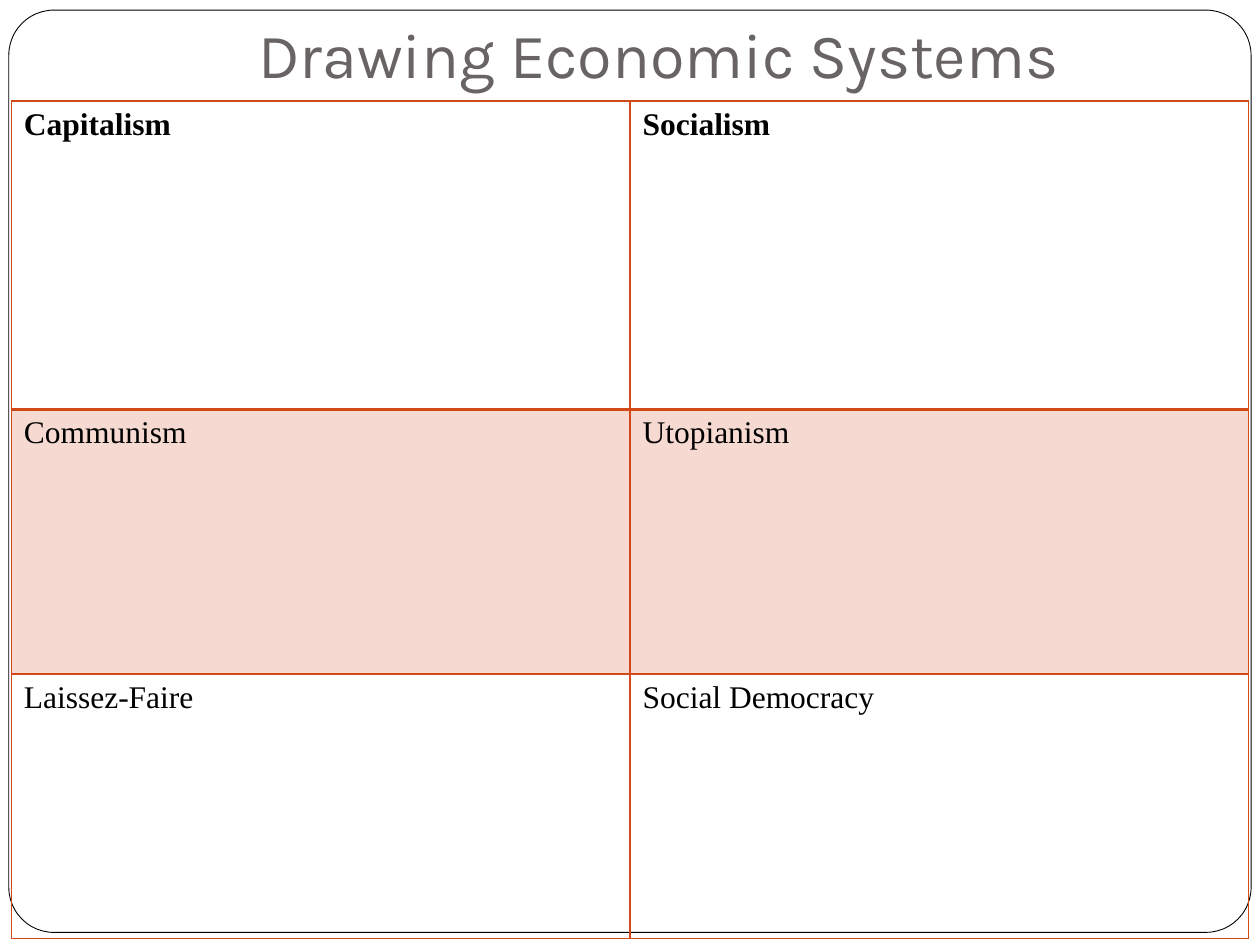
from lxml import etree
from pptx import Presentation
from pptx.dml.color import RGBColor
from pptx.enum.shapes import MSO_SHAPE
from pptx.enum.text import MSO_ANCHOR, PP_ALIGN
from pptx.oxml.ns import qn
from pptx.util import Inches, Pt

ROUNDED = MSO_SHAPE.ROUNDED_RECTANGLE
BOTTOM = MSO_ANCHOR.BOTTOM
LEFT = PP_ALIGN.LEFT

WHITE = RGBColor(0xFF, 0xFF, 0xFF)
BLACK = RGBColor(0x00, 0x00, 0x00)
GRAY = RGBColor(0x69, 0x64, 0x64)
ORANGE = RGBColor(0xD3, 0x48, 0x17)
PALE_ORANGE = RGBColor(0xF6, 0xDA, 0xD1)

TITLE = "Drawing Economic Systems"
SYSTEMS = [
    ("Capitalism", "Socialism"),
    ("Communism", "Utopianism"),
    ("Laissez-Faire", "Social Democracy"),
]
ROW_HEIGHTS = [2.45, 2.1, 2.1]
COLUMN_WIDTH = 4.91
TITLE_ROW, SHADED_ROW = 0, 1


def style_text(para, font_name, size, color, bold=False):
    para.alignment = LEFT
    for span in para.runs:
        span.font.name = font_name
        span.font.size = Pt(size)
        span.font.color.rgb = color
        span.font.bold = bold


def add_border(cell, side, width):
    properties = cell._tc.get_or_add_tcPr()
    line = etree.SubElement(properties, qn(f"a:ln{side}"), w=str(Pt(width)))
    fill = etree.SubElement(line, qn("a:solidFill"))
    etree.SubElement(fill, qn("a:srgbClr"), val=str(ORANGE))


def add_frame(page):
    frame = page.shapes.add_shape(
        ROUNDED, Inches(0.07), Inches(0.08), Inches(9.86), Inches(7.32)
    )
    frame.adjustments[0] = 0.049
    frame.shadow.inherit = False
    frame.fill.solid()
    frame.fill.fore_color.rgb = WHITE
    frame.line.color.rgb = BLACK
    frame.line.width = Pt(0.5)
    page.shapes.title._element.addprevious(frame._element)


def format_title(page):
    title = page.shapes.title
    title.left, title.top = Inches(0.5), Inches(0.14)
    title.width, title.height = Inches(9), Inches(0.68)
    text = title.text_frame
    text.text = TITLE
    text.word_wrap = True
    text.vertical_anchor = BOTTOM
    text.margin_left = Inches(1.55)
    text.margin_right = text.margin_bottom = Inches(0.1)
    text.margin_top = Inches(0.05)
    style_text(text.paragraphs[0], "Karla", 36, GRAY)


def add_systems_table(page):
    table = page.shapes.add_table(
        len(SYSTEMS), 2, Inches(0.09), Inches(0.8),
        Inches(2 * COLUMN_WIDTH), Inches(sum(ROW_HEIGHTS))
    ).table
    table.horz_banding = False
    table.first_row = False
    for column in table.columns:
        column.width = Inches(COLUMN_WIDTH)
    for row_index, names in enumerate(SYSTEMS):
        table.rows[row_index].height = Inches(ROW_HEIGHTS[row_index])
        for column_index, name in enumerate(names):
            cell = table.cell(row_index, column_index)
            cell.text = name
            style_text(cell.text_frame.paragraphs[0], "Times New Roman", 18,
                       BLACK, row_index == TITLE_ROW)
            widths = {"L": 1, "R": 1, "T": 1, "B": 1}
            if row_index == TITLE_ROW:
                widths["B"] = 2
            elif row_index == TITLE_ROW + 1:
                widths["T"] = 2
            for side, width in widths.items():
                add_border(cell, side, width)
            if row_index == SHADED_ROW:
                cell.fill.solid()
                cell.fill.fore_color.rgb = PALE_ORANGE
            else:
                cell.fill.background()


def main():
    deck = Presentation()
    deck.slide_width, deck.slide_height = Inches(10), Inches(7.5)
    page = deck.slides.add_slide(deck.slide_layouts[5])
    add_frame(page)
    format_title(page)
    add_systems_table(page)
    deck.save("out.pptx")


if __name__ == "__main__":
    main()
